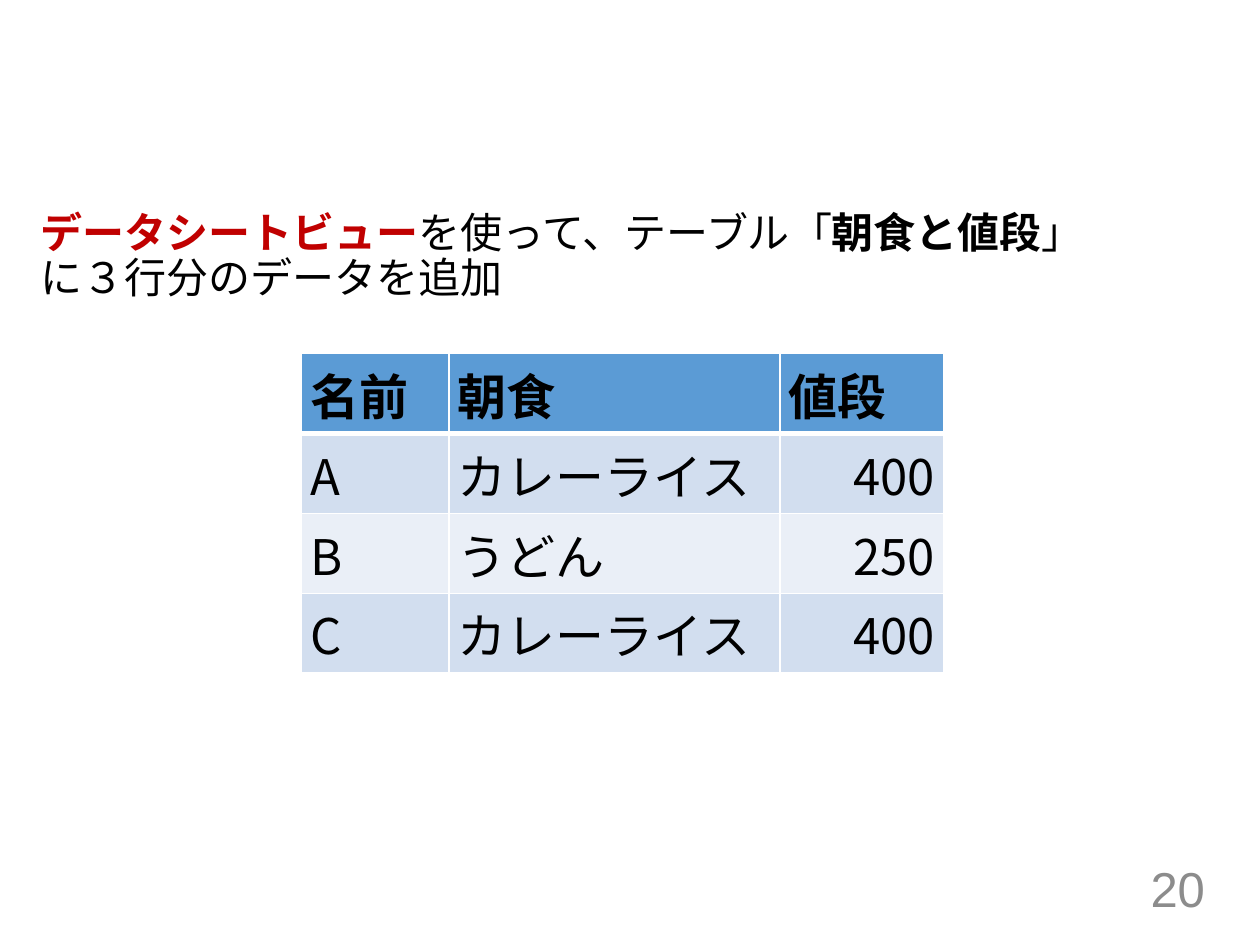
from dataclasses import dataclass

import pptx
import pptx.dml.color
import pptx.enum.text
import pptx.oxml.ns
import pptx.presentation
import pptx.slide
import pptx.table
import pptx.text.text
import pptx.util
from lxml import etree

Cm = pptx.util.Cm
Pt = pptx.util.Pt
ALIGN = pptx.enum.text.PP_ALIGN
ANCHOR = pptx.enum.text.MSO_ANCHOR
qn = pptx.oxml.ns.qn


@dataclass(frozen=True)
class Theme:
    font: str = "Noto Sans CJK JP"
    page_font: str = "Arial"
    ink: str = "000000"
    red: str = "C00000"
    gray: str = "8C8C8C"
    white: str = "FFFFFF"
    head: str = "5B9BD5"
    bands: tuple[str, str] = ("D2DEEF", "EAEFF7")
    body_size: int = 24
    large_size: int = 28


@dataclass(frozen=True)
class Span:
    text: str
    color: str
    bold: bool = False


@dataclass(frozen=True)
class Column:
    title: str
    width: float
    align: ALIGN
    cells: tuple[str, ...]


THEME = Theme()
ROW_HEIGHT = 1.61

SPANS = (
    Span("データシートビュー", THEME.red, True),
    Span("を使って、テーブル「", THEME.ink),
    Span("朝食と値段", THEME.ink, True),
    Span("」に３行分のデータを追加", THEME.ink),
)
COLUMNS = (
    Column("名前", 2.97, ALIGN.LEFT, ("A", "B", "C")),
    Column("朝食", 6.67, ALIGN.LEFT, ("カレーライス", "うどん", "カレーライス")),
    Column("値段", 3.3, ALIGN.RIGHT, ("400", "250", "400")),
)


def add_span(para: pptx.text.text._Paragraph, span: Span, size: int,
             face: str = THEME.font) -> None:
    run = para.add_run()
    run.text = span.text
    font = run.font
    font.size, font.bold, font.name = Pt(size), span.bold, face
    font.color.rgb = pptx.dml.color.RGBColor.from_string(span.color)
    # East Asian text needs its own typeface entry
    etree.SubElement(run._r.get_or_add_rPr(), qn("a:ea"), typeface=face)


def set_insets(part: pptx.text.text.TextFrame | pptx.table._Cell) -> None:
    part.margin_left = part.margin_right = Cm(0.18)
    part.margin_top = part.margin_bottom = Cm(0.1)


def set_edge(cell: pptx.table._Cell, side: str, width: float) -> None:
    props = cell._tc.get_or_add_tcPr()
    line = etree.SubElement(props, qn(f"a:ln{side}"), w=str(Pt(width)))
    fill = etree.SubElement(line, qn("a:solidFill"))
    etree.SubElement(fill, qn("a:srgbClr"), val=THEME.white)


def add_body(slide: pptx.slide.Slide) -> None:
    body = slide.placeholders[1]
    body.left, body.top = Cm(0.64), Cm(4.17)
    body.width, body.height = Cm(21.77), Cm(2.77)
    frame = body.text_frame
    frame.word_wrap = True
    frame.auto_size = pptx.enum.text.MSO_AUTO_SIZE.NONE
    frame.vertical_anchor = ANCHOR.TOP
    set_insets(frame)
    para = frame.paragraphs[0]
    para.line_spacing, para.space_before = 0.9, Pt(10)
    props = para._p.get_or_add_pPr()
    props.set("marL", "0")
    props.set("indent", "0")
    etree.SubElement(props, qn("a:buNone"))
    for span in SPANS:
        add_span(para, span, THEME.body_size)


def fill_cell(cell: pptx.table._Cell, text: str, row: int, align: ALIGN) -> None:
    head = row == 0
    set_insets(cell)
    for side in "LRTB":
        thick = (head and side == "B") or (row == 1 and side == "T")
        set_edge(cell, side, 3 if thick else 1)
    color = THEME.head if head else THEME.bands[(row - 1) % 2]
    cell.fill.solid()
    cell.fill.fore_color.rgb = pptx.dml.color.RGBColor.from_string(color)
    para = cell.text_frame.paragraphs[0]
    para.alignment = ALIGN.LEFT if head else align
    add_span(para, Span(text, THEME.ink, head), THEME.large_size)


def add_menu(slide: pptx.slide.Slide) -> None:
    count = len(COLUMNS[0].cells) + 1
    width = sum(col.width for col in COLUMNS)
    table = slide.shapes.add_table(
        count, len(COLUMNS), Cm(6.08), Cm(7.13),
        Cm(width), Cm(ROW_HEIGHT * count)).table
    for row in table.rows:
        row.height = Cm(ROW_HEIGHT)
    for x, col in enumerate(COLUMNS):
        table.columns[x].width = Cm(col.width)
        for y, text in enumerate((col.title, *col.cells)):
            fill_cell(table.cell(y, x), text, y, col.align)


def add_page(slide: pptx.slide.Slide) -> None:
    box = slide.shapes.add_textbox(Cm(18.82), Cm(17.53), Cm(5.72), Cm(0.76))
    frame = box.text_frame
    frame.word_wrap = True
    frame.vertical_anchor = ANCHOR.MIDDLE
    para = frame.paragraphs[0]
    para.alignment = ALIGN.RIGHT
    add_span(para, Span("20", THEME.gray), THEME.large_size, THEME.page_font)


def main() -> None:
    deck = pptx.Presentation()
    deck.slide_width, deck.slide_height = Cm(25.4), Cm(19.05)
    slide = deck.slides.add_slide(deck.slide_layouts[1])
    # This slide has no title
    title = slide.shapes.title._element
    title.getparent().remove(title)
    # Page number, task text, table
    add_page(slide)
    add_body(slide)
    add_menu(slide)
    deck.save("out.pptx")


if __name__ == "__main__":
    main()
